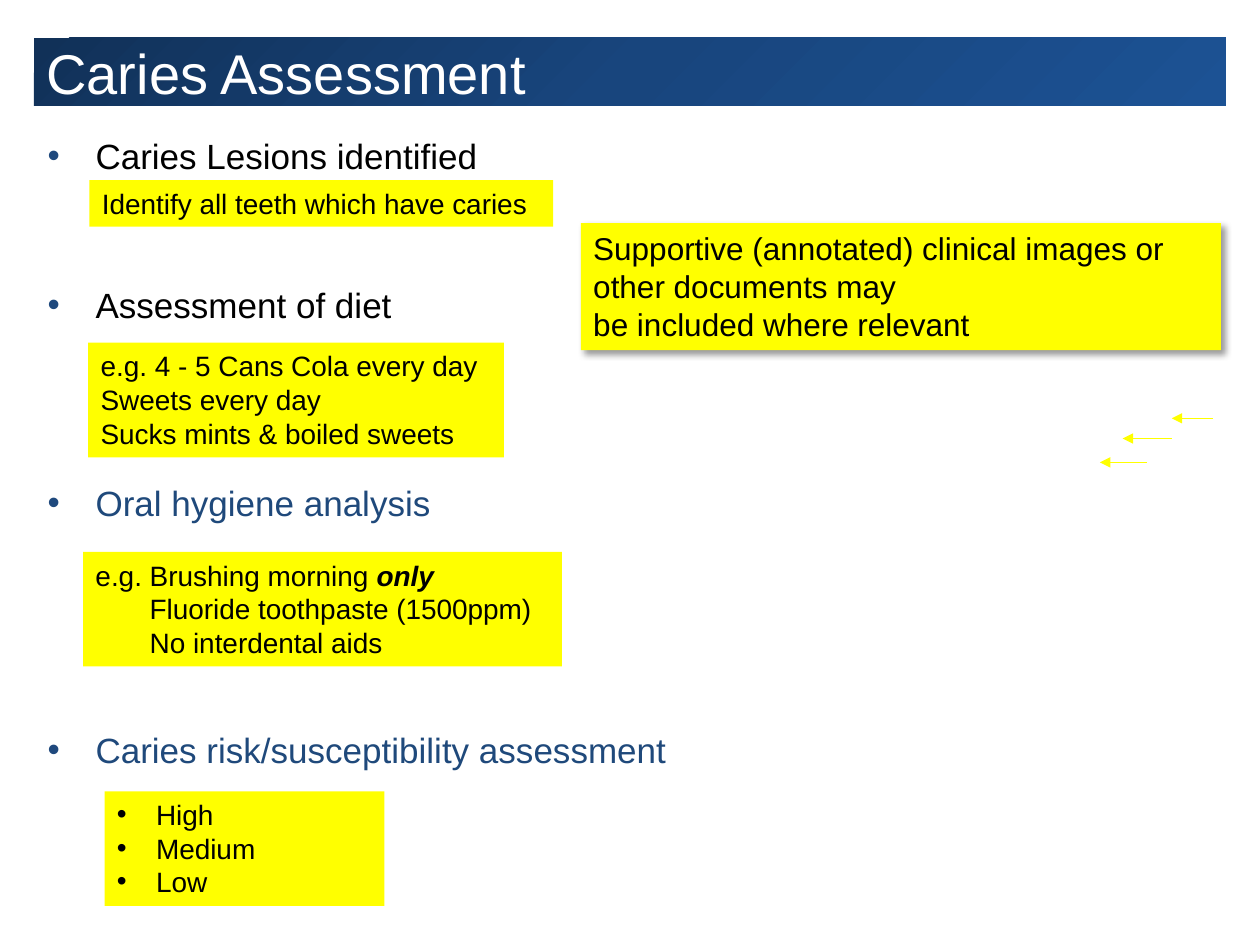
from dataclasses import dataclass, field
from typing import Any
from pptx import Presentation
from pptx.dml.color import RGBColor
from pptx.enum.shapes import MSO_CONNECTOR, MSO_SHAPE
from pptx.enum.text import MSO_ANCHOR, PP_ALIGN
from pptx.oxml import parse_xml
from pptx.oxml.ns import nsdecls
from pptx.util import Inches, Pt

COLORS = {
    "black": "000000", "white": "FFFFFF", "yellow": "FFFF00",
    "blue": "1F497B", "bullet": "1F497D",
    "dark": "113158", "mid": "18457D", "light": "1C5294",
}


@dataclass
class Run:
    text: str
    strong: bool = False


@dataclass
class Para:
    runs: list[Run]
    color: str = "black"
    indent: float = 0
    hang: float = 0
    before: float = 0
    bullet: str = ""


@dataclass
class Note:
    left: float
    top: float
    width: float
    height: float
    paras: list[Para] = field(default_factory=list)
    size: int = 16
    shadow: bool = False


@dataclass
class Arrow:
    start: float
    end: float
    y: float


def rgb(name: str) -> RGBColor:
    return RGBColor.from_string(COLORS[name])


def xml(tag: str, body: str = "") -> Any:
    """Make a drawing element; tag may hold attributes."""
    name = tag.split()[0]
    return parse_xml(f"<a:{tag} {nsdecls('a')}>{body}</a:{name}>")


def plain(*lines: str, **style: Any) -> list[Para]:
    return [Para([Run(line)], **style) for line in lines]


def write(shape: Any, paras: list[Para], *, size: int,
          anchor: MSO_ANCHOR = MSO_ANCHOR.TOP) -> None:
    frame = shape.text_frame
    frame.word_wrap = True
    frame.vertical_anchor = anchor
    for i, para in enumerate(paras):
        p = frame.paragraphs[0] if i == 0 else frame.add_paragraph()
        p.alignment = PP_ALIGN.LEFT
        p.space_before = Pt(para.before)
        props = p._p.get_or_add_pPr()
        props.set("marL", str(Inches(para.indent)))
        props.set("indent", str(Inches(-para.hang)))
        if para.bullet:
            tint = f'<a:srgbClr val="{COLORS[para.bullet]}"/>'
            props.append(xml("buClr", tint))
            props.append(xml('buFont typeface="Arial"'))
            props.append(xml('buChar char="•"'))
        for part in para.runs:
            run = p.add_run()
            run.text = part.text
            run.font.name = "Arial"
            run.font.size = Pt(size)
            run.font.bold = run.font.italic = part.strong
            run.font.color.rgb = rgb(para.color)


def add_box(slide: Any, left: float, top: float,
            width: float, height: float) -> Any:
    box = slide.shapes.add_shape(
        MSO_SHAPE.RECTANGLE, Inches(left), Inches(top),
        Inches(width), Inches(height))
    box.line.fill.background()
    box.shadow.inherit = False
    return box


def add_title(slide: Any, text: str) -> None:
    box = add_box(slide, 0.27, 0.3, 9.46, 0.54)
    stops = "".join(
        f'<a:gs pos="{pos}000"><a:srgbClr val="{COLORS[name]}"/></a:gs>'
        for pos, name in ((0, "dark"), (50, "mid"), (100, "light")))
    fill = xml("gradFill",
               f'<a:gsLst>{stops}</a:gsLst><a:lin ang="2700000" scaled="0"/>')
    box.element.spPr.find("{*}prstGeom").addnext(fill)
    write(box, plain(text, color="white"), size=32, anchor=MSO_ANCHOR.MIDDLE)


def add_note(slide: Any, note: Note) -> None:
    box = add_box(slide, note.left, note.top, note.width, note.height)
    box.fill.solid()
    box.fill.fore_color.rgb = rgb("yellow")
    if note.shadow:
        shade = xml(
            f'outerShdw blurRad="{Pt(4)}" dist="{Pt(3)}" dir="2700000" '
            'algn="tl" rotWithShape="0"',
            f'<a:srgbClr val="{COLORS["black"]}">'
            '<a:alpha val="40000"/></a:srgbClr>')
        box.element.spPr.find("{*}effectLst").append(shade)
    write(box, note.paras, size=note.size)


def add_arrow(slide: Any, arrow: Arrow) -> None:
    line = slide.shapes.add_connector(
        MSO_CONNECTOR.STRAIGHT, Inches(arrow.start), Inches(arrow.y),
        Inches(arrow.end), Inches(arrow.y))
    line.line.color.rgb = rgb("yellow")
    line.line.width = Pt(0.75)
    line.line._get_or_add_ln().append(xml('tailEnd type="triangle"'))
    line.element.spPr.append(xml("effectLst"))


# Headings, with the gap above each one in points
TOPICS = [
    ("Caries Lesions identified", "black", 0),
    ("Assessment of diet", "black", 61),
    ("Oral hygiene analysis", "blue", 89),
    ("Caries risk/susceptibility assessment", "blue", 117),
]

NOTES = [
    Note(0.7, 2.72, 3.3, 0.91, plain(
        "e.g. 4 - 5 Cans Cola every day", "Sweets every day",
        "Sucks mints & boiled sweets")),
    Note(0.66, 4.38, 3.8, 0.91, [
        Para([Run("e.g. Brushing morning "), Run("only", strong=True)]),
        *plain("Fluoride toothpaste (1500ppm)", "No interdental aids",
               indent=0.43)]),
    Note(4.61, 1.77, 5.08, 1.01, plain(
        "Supportive (annotated) clinical images or other documents may",
        "be included where relevant"), size=18, shadow=True),
    Note(0.83, 6.28, 2.22, 0.91, plain(
        "High", "Medium", "Low", indent=0.31, hang=0.31, bullet="black")),
    Note(0.71, 1.43, 3.68, 0.37, plain("Identify all teeth which have caries")),
]

ARROWS = [Arrow(9.63, 9.3, 3.32), Arrow(9.3, 8.91, 3.48),
          Arrow(9.1, 8.73, 3.67)]


def main() -> None:
    deck = Presentation()
    deck.slide_width, deck.slide_height = Inches(10), Inches(7.5)
    slide = deck.slides.add_slide(deck.slide_layouts[6])

    # Title bar
    add_title(slide, "Caries Assessment")

    # Topic list
    body = slide.shapes.add_textbox(
        Inches(0.28), Inches(0.99), Inches(5.29), Inches(5.43))
    body.text_frame.margin_top = Inches(0.08)
    write(body, [Para([Run(text)], color=color, indent=0.38, hang=0.38,
                      before=gap, bullet="bullet")
                 for text, color, gap in TOPICS], size=20)

    # Yellow notes and arrows
    for note in NOTES:
        add_note(slide, note)
    for arrow in ARROWS:
        add_arrow(slide, arrow)

    deck.save("out.pptx")


if __name__ == "__main__":
    main()
